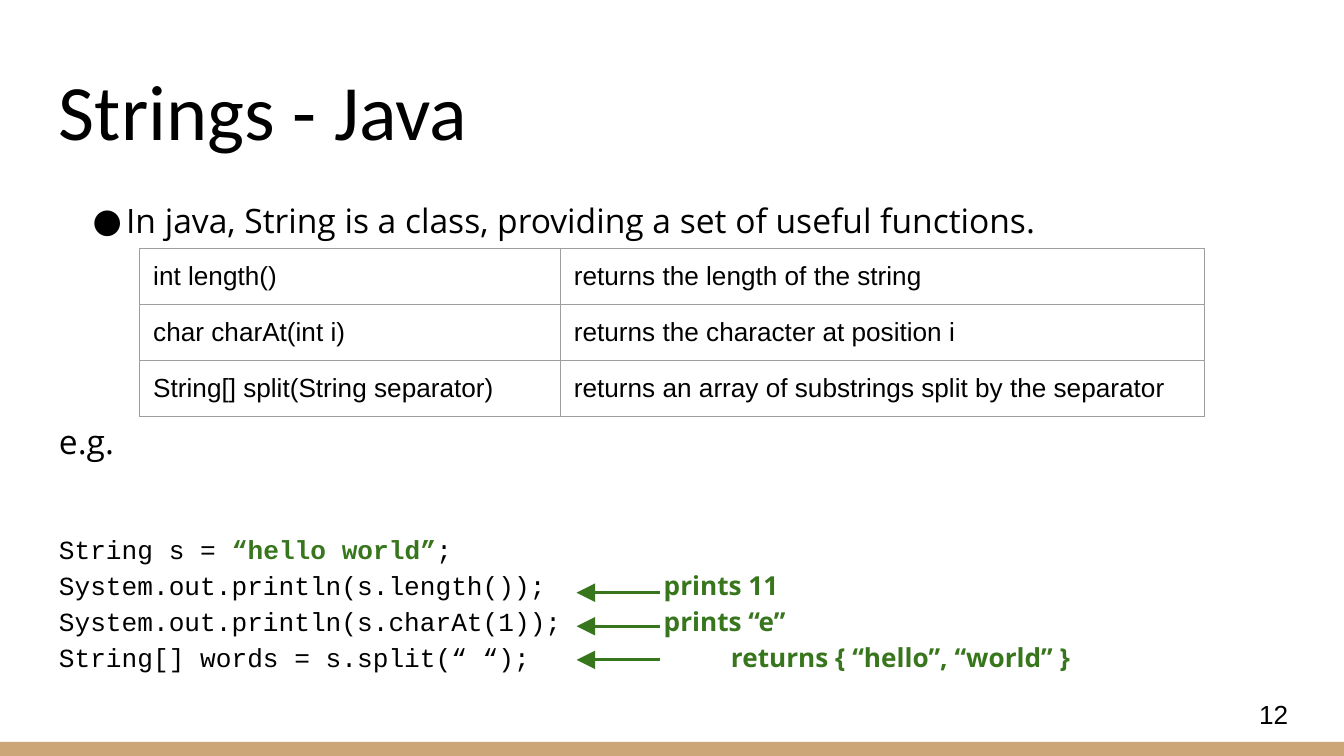
from dataclasses import dataclass

import lxml.etree
import pptx
import pptx.dml.color
import pptx.enum.shapes
import pptx.enum.text
import pptx.oxml.ns
import pptx.util
from pptx.util import Inches

BLACK = "000000"
GREEN = "38761D"
GREY = "9E9E9E"
TAN = "CCA677"


@dataclass
class Run:
    text: str
    color: str = BLACK
    bold: bool = False
    font: str | None = None


@dataclass
class Passage:
    runs: list[Run]
    font: str
    size: float
    spacing: float | pptx.util.Length = 1.0
    space_before: float = 0
    bullet: bool = False


@dataclass
class TextBlock:
    left: float
    top: float
    width: float
    height: float
    passages: list[Passage]
    anchor: pptx.enum.text.MSO_ANCHOR = pptx.enum.text.MSO_ANCHOR.TOP


def result(text: str) -> Run:
    return Run(text, GREEN, True, "Open Sans")


CODE_RUNS = [
    Run("String s = "),
    Run("“hello world”", GREEN, True),
    Run(";\nSystem.out.println(s.length());\t\t"),
    result("prints 11\n"),
    Run("System.out.println(s.charAt(1));\t\t"),
    result("prints “e”\n"),
    Run("String[] words = s.split(“ “);\t\t\t"),
    result("returns { “hello”, “world” }"),
]
TEXT_BLOCKS = [
    TextBlock(0.34, 0.35, 9.32, 0.91,
              [Passage([Run("Strings - Java")], "Calibri", 42)],
              pptx.enum.text.MSO_ANCHOR.BOTTOM),
    TextBlock(0.34, 1.34, 9.32, 3.67, [
        Passage([Run("In java, String is a class, providing a set of useful functions.")],
                "Open Sans", 18, 1.15, bullet=True),
        Passage([Run("e.g.")], "Open Sans", 18, 1.15, space_before=94),
        Passage(CODE_RUNS, "Courier New", 14, pptx.util.Pt(19.3), space_before=36),
    ]),
    TextBlock(9.27, 5.1, 0.6, 0.43, [Passage([Run("12")], "Arial", 14)],
              pptx.enum.text.MSO_ANCHOR.MIDDLE),
]

METHODS = [
    ("int length()", "returns the length of the string"),
    ("char charAt(int i)", "returns the character at position i"),
    ("String[] split(String separator)",
     "returns an array of substrings split by the separator"),
]
COLUMN_WIDTHS = (3.13, 4.79)
TABLE_HEIGHT = 1.25


def rgb(color: str) -> pptx.dml.color.RGBColor:
    return pptx.dml.color.RGBColor.from_string(color)


def add_child(parent, tag: str, **attributes: str):
    child = lxml.etree.SubElement(parent, pptx.oxml.ns.qn(tag))
    for name, value in attributes.items():
        child.set(name, value)
    return child


def add_bullet(paragraph, font: str) -> None:
    properties = paragraph._p.get_or_add_pPr()
    properties.set("marL", str(Inches(0.5)))
    properties.set("indent", str(Inches(-0.25)))
    color = add_child(properties, "a:buClr")
    add_child(color, "a:srgbClr", val=BLACK)
    typeface = add_child(properties, "a:buFont", typeface=font)
    character = add_child(properties, "a:buChar", char="●")
    defaults = properties.find(pptx.oxml.ns.qn("a:defRPr"))
    for element in (color, typeface, character):
        defaults.addprevious(element)


def add_run(paragraph, item: Run) -> None:
    for index, text in enumerate(item.text.split("\n")):
        if index:
            paragraph.add_line_break()
        if text:
            run = paragraph.add_run()
            run.text = text
            run.font.bold = item.bold
            run.font.color.rgb = rgb(item.color)
            if item.font:
                run.font.name = item.font


def add_text(slide, block: TextBlock) -> None:
    frame = slide.shapes.add_textbox(
        Inches(block.left), Inches(block.top),
        Inches(block.width), Inches(block.height)).text_frame
    frame.word_wrap = True
    frame.vertical_anchor = block.anchor
    frame.margin_left = frame.margin_right = Inches(0.1)
    frame.margin_top = frame.margin_bottom = Inches(0.1)
    for index, passage in enumerate(block.passages):
        paragraph = frame.add_paragraph() if index else frame.paragraphs[0]
        paragraph.font.name = passage.font
        paragraph.font.size = pptx.util.Pt(passage.size)
        paragraph.line_spacing = passage.spacing
        paragraph.space_before = pptx.util.Pt(passage.space_before)
        if passage.bullet:
            add_bullet(paragraph, passage.font)
        for item in passage.runs:
            add_run(paragraph, item)


def style_cell(cell, text: str) -> None:
    cell.text = text
    cell.margin_left = cell.margin_right = cell.margin_top = Inches(0.1)
    cell.margin_bottom = Inches(0.08)
    font = cell.text_frame.paragraphs[0].font
    font.name = "Arial"
    font.size = pptx.util.Pt(14)
    font.color.rgb = rgb(BLACK)
    properties = cell._tc.get_or_add_tcPr()
    for side in ("a:lnL", "a:lnR", "a:lnT", "a:lnB"):
        border = add_child(properties, side, w=str(pptx.util.Pt(0.75)))
        add_child(add_child(border, "a:solidFill"), "a:srgbClr", val=GREY)
    cell.fill.background()


def add_methods_table(slide) -> None:
    table = slide.shapes.add_table(
        len(METHODS), len(COLUMN_WIDTHS), Inches(1.04), Inches(1.85),
        Inches(sum(COLUMN_WIDTHS)), Inches(TABLE_HEIGHT)).table
    table.first_row = False
    table.horz_banding = False
    for column, width in zip(table.columns, COLUMN_WIDTHS):
        column.width = Inches(width)
    for row, texts in zip(table.rows, METHODS):
        for cell, text in zip(row.cells, texts):
            style_cell(cell, text)


def add_arrow(slide, y: float) -> None:
    arrow = slide.shapes.add_connector(
        pptx.enum.shapes.MSO_CONNECTOR.STRAIGHT,
        Inches(4.91), Inches(y), Inches(4.29), Inches(y))
    arrow.line.color.rgb = rgb(GREEN)
    arrow.line.width = pptx.util.Pt(1.5)
    add_child(arrow.line._get_or_add_ln(), "a:tailEnd", type="triangle", w="lg", len="lg")
    add_child(arrow._element.spPr, "a:effectLst")


def add_footer_bar(slide) -> None:
    bar = slide.shapes.add_shape(
        pptx.enum.shapes.MSO_SHAPE.RECTANGLE,
        Inches(0), Inches(5.52), Inches(10), Inches(0.11))
    bar.shadow.inherit = False
    bar.fill.solid()
    bar.fill.fore_color.rgb = rgb(TAN)
    bar.line.fill.background()


def main() -> None:
    presentation = pptx.Presentation()
    presentation.slide_width = Inches(10)
    presentation.slide_height = Inches(10 * 9 / 16)
    slide = presentation.slides.add_slide(presentation.slide_layouts[6])
    add_footer_bar(slide)
    for block in TEXT_BLOCKS:
        add_text(slide, block)
    add_methods_table(slide)
    for index in range(3):
        add_arrow(slide, 4.41 + 0.25 * index)
    presentation.save("out.pptx")


if __name__ == "__main__":
    main()
